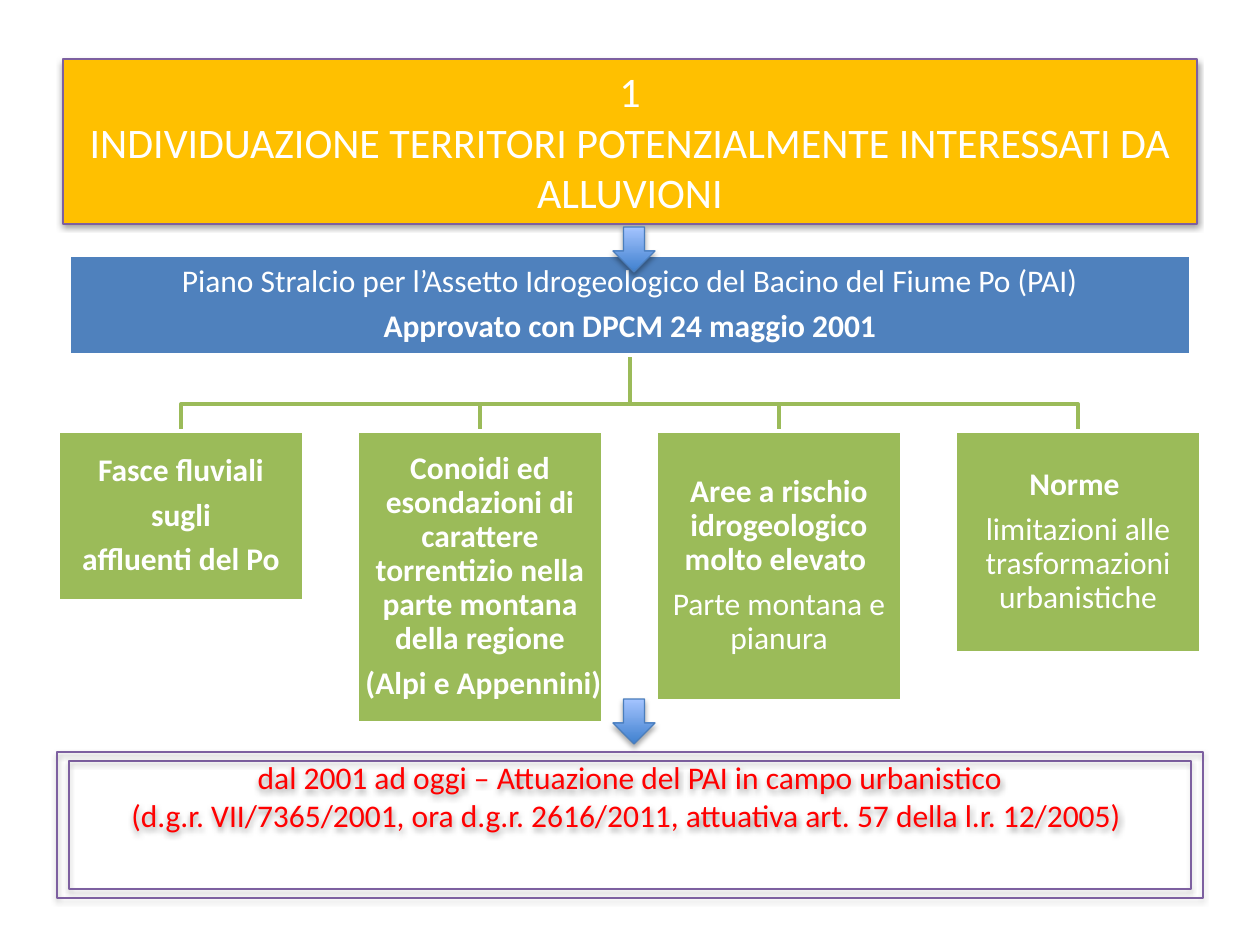
from copy import deepcopy

from lxml.etree import SubElement
from pptx import Presentation
from pptx.dml.color import RGBColor as RGB
from pptx.enum.shapes import MSO_SHAPE as SHAPE
from pptx.enum.text import MSO_ANCHOR as ANCHOR, MSO_AUTO_SIZE as FIT, PP_ALIGN as ALIGN
from pptx.oxml.ns import qn
from pptx.util import Pt

PX = 914400 / 126  # EMU in one px
COLORS = {
    "amber": "FFC000", "blue": "4F81BD", "green": "9BBB59", "purple": "7D60A0",
    "white": "FFFFFF", "red": "FF0000",
    "arrow_line": "4B7EBC", "arrow_dark": "3F80CE", "arrow_light": "A4C4FF",
}


def emu(px):
    return round(px * PX)


def color(name):
    return RGB.from_string(COLORS[name])


def write(frame, lines, size=18, ink="white", font="Calibri", anchor=ANCHOR.MIDDLE,
          inset=None, spacing=None, after=None):
    """Fill a text frame with (text, bold) paragraphs."""
    frame.word_wrap = True
    frame.auto_size = FIT.NONE
    frame.vertical_anchor = anchor
    if inset is not None:
        frame.margin_left = frame.margin_right = emu(inset)
        frame.margin_top = frame.margin_bottom = emu(inset)
    for i, (text, bold) in enumerate(lines):
        par = frame.add_paragraph() if i else frame.paragraphs[0]
        par.text = text
        par.alignment = ALIGN.CENTER
        if spacing:
            par.line_spacing = spacing
        if after:
            par.space_after = Pt(after)
        for run in par.runs:
            run.font.name, run.font.size, run.font.bold = font, Pt(size), bold
            run.font.color.rgb = color(ink)
        # Line breaks take the size of the text around them
        for br in par._p.findall(qn("a:br")):
            br.append(deepcopy(par.runs[0]._r.rPr))


class SlideBuilder:
    def __init__(self, slide):
        self.slide = slide

    def style(self, shape, fill=None, line="white", width=2.0, shadow=None):
        if fill:
            shape.fill.solid()
            shape.fill.fore_color.rgb = color(fill)
        else:
            shape.fill.background()
        shape.line.color.rgb = color(line)
        shape.line.width = Pt(width)
        shape.shadow.inherit = False
        if shadow:
            alpha, distance = shadow
            effects = shape._element.spPr.find(qn("a:effectLst"))
            outer = SubElement(effects, qn("a:outerShdw"), blurRad=str(Pt(3.1)),
                               dist=str(Pt(distance)), dir="5400000", rotWithShape="0")
            black = SubElement(outer, qn("a:srgbClr"), val="000000")
            SubElement(black, qn("a:alpha"), val=str(alpha * 1000))

    def title(self, x, y, w, h, text):
        title = self.slide.shapes.title
        title.left, title.top, title.width, title.height = map(emu, (x, y, w, h))
        self.style(title, "amber", "purple", 0.75, (38, 1.6))
        write(title.text_frame, [(text, False)], size=24)

    def shape(self, kind, x, y, w, h, **look):
        shape = self.slide.shapes.add_shape(kind, *map(emu, (x, y, w, h)))
        self.style(shape, **look)
        return shape

    def block(self, x, y, w, h, fill, lines):
        block = self.shape(SHAPE.RECTANGLE, x, y, w, h, fill=fill)
        write(block.text_frame, lines, inset=1, spacing=0.9, after=6)

    def frame(self, x, y, w, h):
        return self.shape(SHAPE.RECTANGLE, x, y, w, h, line="purple", width=0.75,
                          shadow=(38, 1.6))

    def arrow(self, x, y, w, h):
        arrow = self.shape(SHAPE.DOWN_ARROW, x, y, w, h, line="arrow_line", width=0.75,
                           shadow=(35, 1.8))
        arrow.fill.gradient()
        arrow.fill.gradient_angle = 90
        for stop, name, place in zip(arrow.fill.gradient_stops,
                                     ("arrow_dark", "arrow_light"), (0, 1)):
            stop.color.rgb = color(name)
            stop.position = place

    def branch(self, points):
        path = self.slide.shapes.build_freeform(*points[0], scale=PX)
        path.add_line_segments(points[1:], close=False)
        self.style(path.convert_to_shape(), line="green")


def main():
    prs = Presentation()
    prs.slide_width, prs.slide_height = emu(1260), emu(945)
    page = SlideBuilder(prs.slides.add_slide(prs.slide_layouts[5]))

    page.title(63, 59, 1134, 165,
               "1\nINDIVIDUAZIONE TERRITORI POTENZIALMENTE INTERESSATI DA ALLUVIONI")

    # Parts of the plan: height and text
    parts = [
        (170, [("Fasce fluviali", True), ("sugli", True), ("affluenti del Po", True)]),
        (292, [("Conoidi ed esondazioni di carattere torrentizio nella parte montana "
                "della regione", True), (" (Alpi e Appennini)", True)]),
        (270, [("Aree a rischio idrogeologico molto elevato ", True),
               ("Parte montana e pianura", False)]),
        (222, [("Norme ", True), ("limitazioni alle trasformazioni urbanistiche", False)]),
    ]
    left, step, width, top = 58, 299, 246, 431
    plan_x, plan_bottom, fork = 630, 355, 404

    # Branches from the plan to its parts
    for i in reversed(range(len(parts))):
        middle = left + i * step + width // 2
        page.branch([(plan_x, plan_bottom), (plan_x, fork), (middle, fork), (middle, top)])

    # Plan and parts
    page.block(69, 255, 1122, 100, "blue", [
        ("Piano Stralcio per l’Assetto Idrogeologico del Bacino del Fiume Po (PAI)", False),
        ("Approvato con DPCM 24 maggio 2001", True),
    ])
    for i, (height, lines) in enumerate(parts):
        page.block(left + i * step, top, width, height, "green", lines)

    # Implementation in a double frame, with arrows leading down
    page.arrow(613, 227, 42, 45)
    page.frame(69, 761, 1122, 128)
    implementation = page.frame(57, 752, 1146, 146)
    write(implementation.text_frame, [
        ("dal 2001 ad oggi – Attuazione del PAI in campo urbanistico", False),
        ("(d.g.r. VII/7365/2001, ora d.g.r. 2616/2011, attuativa art. 57 della l.r. "
         "12/2005) ", False),
    ], ink="red", anchor=ANCHOR.TOP)
    page.arrow(613, 699, 42, 45)

    prs.save("out.pptx")


if __name__ == "__main__":
    main()
